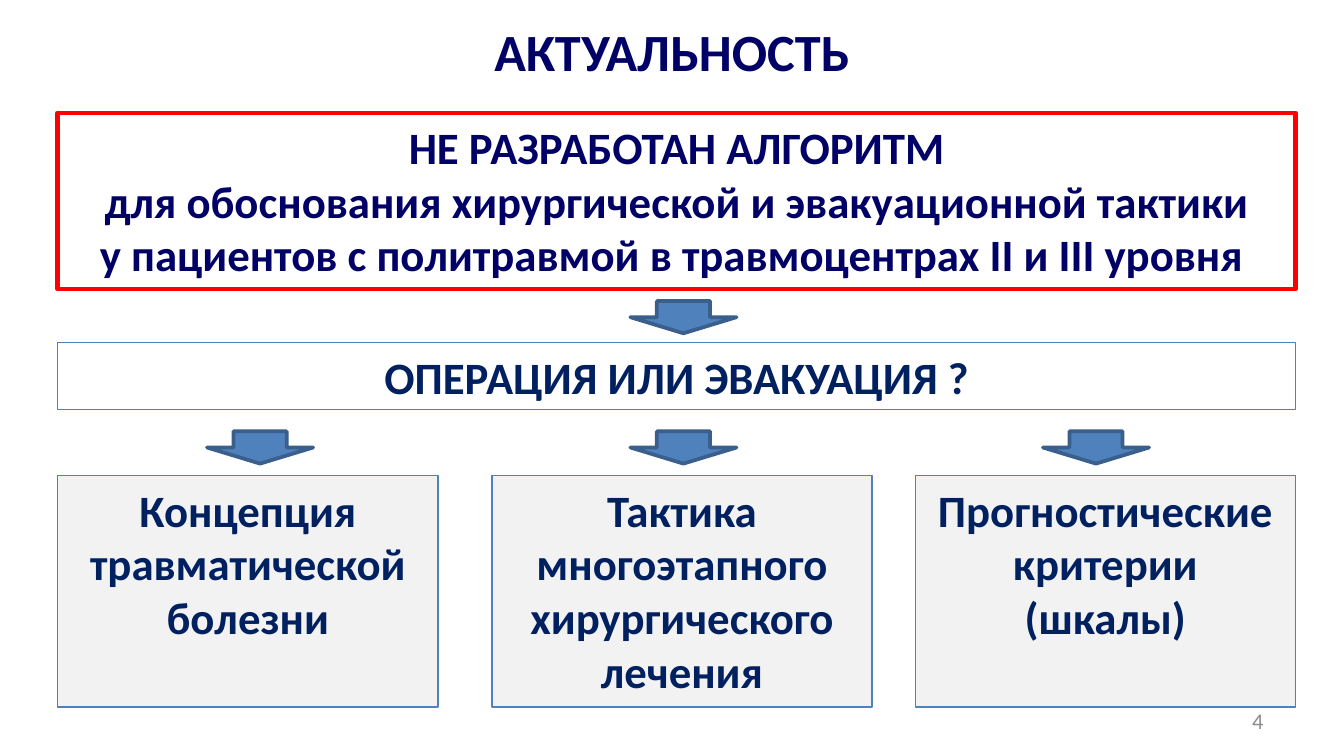
from dataclasses import dataclass
from typing import Optional

from pptx import Presentation
from pptx.dml.color import RGBColor
from pptx.enum.shapes import MSO_SHAPE
from pptx.enum.text import MSO_ANCHOR, PP_ALIGN
from pptx.util import Inches, Pt

RECT, DOWN_ARROW = MSO_SHAPE.RECTANGLE, MSO_SHAPE.DOWN_ARROW
TOP, MIDDLE = MSO_ANCHOR.TOP, MSO_ANCHOR.MIDDLE
CENTER, RIGHT = PP_ALIGN.CENTER, PP_ALIGN.RIGHT

FONT = "Calibri"
COLORS = {
    "navy": "000066",
    "dark_blue": "002060",
    "blue": "4F81BD",
    "arrow_edge": "3A5F8C",
    "red": "FF0000",
    "card": "F2F2F2",
    "gray": "8C8C8C",
}

SLIDE_WIDTH = 10
SLIDE_HEIGHT = SLIDE_WIDTH * 9 / 16
LEFT, FULL_WIDTH = 0.43, 9.21
CARD_TOP, CARD_WIDTH, CARD_HEIGHT = 3.54, 2.83, 1.72
ARROW_WIDTH, ARROW_HEIGHT = 0.79, 0.24


@dataclass
class Box:
    left: float
    top: float
    width: float
    height: float
    lines: list[str]
    color: str = "dark_blue"
    fill: Optional[str] = None
    edge: str = "blue"
    edge_width: float = 0.75


@dataclass
class Label:
    left: float
    top: float
    width: float
    height: float
    text: str
    size: float
    color: str
    bold: bool
    align: PP_ALIGN


BOXES = [
    Box(LEFT, 0.84, FULL_WIDTH, 1.31,
        ["НЕ РАЗРАБОТАН АЛГОРИТМ",
         "для обоснования хирургической и эвакуационной тактики",
         "у пациентов с политравмой в травмоцентрах II и III уровня "],
        color="navy", edge="red", edge_width=2.5),
    Box(LEFT, 2.55, FULL_WIDTH, 0.5, ["ОПЕРАЦИЯ ИЛИ ЭВАКУАЦИЯ ?"]),
]
CARDS = [
    (LEFT, ["Концепция", "травматической", "болезни"]),
    (3.66, ["Тактика", "многоэтапного", "хирургического", "лечения"]),
    (6.81, ["Прогностические", "критерии", "(шкалы)"]),
]
BOXES += [Box(left, CARD_TOP, CARD_WIDTH, CARD_HEIGHT, lines, fill="card")
          for left, lines in CARDS]
ARROWS = [(4.69, 2.24), (1.54, 3.21), (4.69, 3.21), (7.76, 3.21)]
LABELS = [
    Label(0.5, 0.15, 9, 0.46, "АКТУАЛЬНОСТЬ", 28, "navy", True, CENTER),
    Label(7.17, 5.21, 2.33, 0.3, "4", 12, "gray", False, RIGHT),
]


def rgb(name: str) -> RGBColor:
    return RGBColor.from_string(COLORS[name])


def write(sp, lines: list[str], size: float, color: str, bold: bool,
          align: PP_ALIGN, anchor: MSO_ANCHOR) -> None:
    """Put one paragraph per line into the shape."""
    tf = sp.text_frame
    tf.word_wrap = True
    tf.vertical_anchor = anchor
    for i, line in enumerate(lines):
        p = tf.add_paragraph() if i else tf.paragraphs[0]
        p.alignment = align
        r = p.add_run()
        r.text = line
        r.font.name = FONT
        r.font.size = Pt(size)
        r.font.bold = bold
        r.font.color.rgb = rgb(color)


def add_outlined(s, kind: MSO_SHAPE, left: float, top: float, width: float,
                 height: float, fill: Optional[str], edge: str,
                 edge_width: float):
    sp = s.shapes.add_shape(kind, Inches(left), Inches(top),
                            Inches(width), Inches(height))
    sp.shadow.inherit = False
    if fill:
        sp.fill.solid()
        sp.fill.fore_color.rgb = rgb(fill)
    else:
        sp.fill.background()
    sp.line.color.rgb = rgb(edge)
    sp.line.width = Pt(edge_width)
    return sp


def add_box(s, box: Box) -> None:
    sp = add_outlined(s, RECT, box.left, box.top, box.width, box.height,
                      box.fill, box.edge, box.edge_width)
    write(sp, box.lines, 24, box.color, True, CENTER, TOP)


def add_arrow(s, left: float, top: float) -> None:
    add_outlined(s, DOWN_ARROW, left, top, ARROW_WIDTH, ARROW_HEIGHT,
                 "blue", "arrow_edge", 2)


def add_label(s, label: Label) -> None:
    sp = s.shapes.add_textbox(Inches(label.left), Inches(label.top),
                              Inches(label.width), Inches(label.height))
    write(sp, [label.text], label.size, label.color, label.bold,
          label.align, MIDDLE)


def main() -> None:
    prs = Presentation()
    prs.slide_width = Inches(SLIDE_WIDTH)
    prs.slide_height = Inches(SLIDE_HEIGHT)
    s = prs.slides.add_slide(prs.slide_layouts[6])
    for box in BOXES:
        add_box(s, box)
    for left, top in ARROWS:
        add_arrow(s, left, top)
    for label in LABELS:
        add_label(s, label)
    prs.save("out.pptx")


if __name__ == "__main__":
    main()
